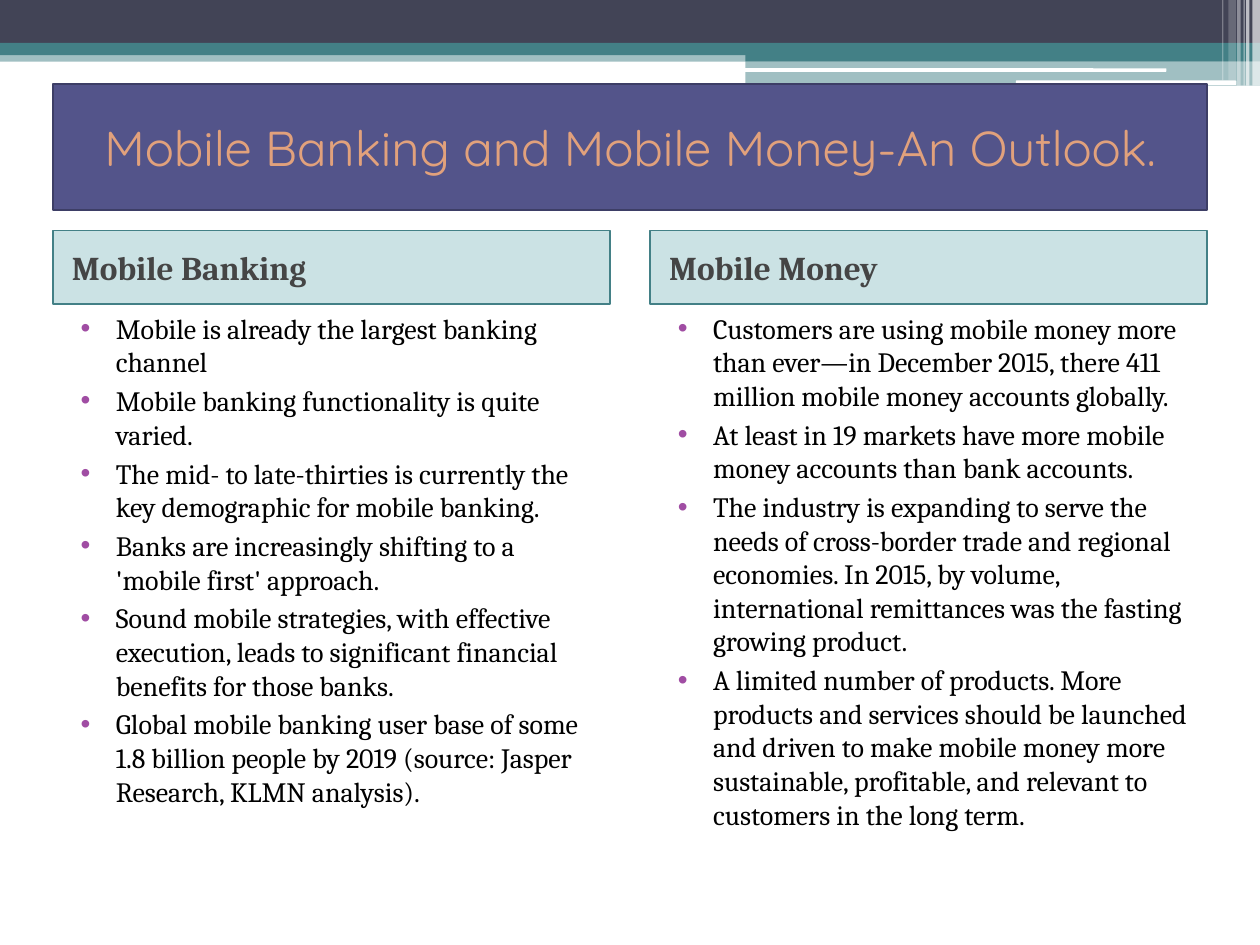
"""Build the slide that sets mobile banking beside mobile money."""
from dataclasses import dataclass

from lxml import etree
from pptx import Presentation
from pptx import util as u
from pptx.dml.color import RGBColor
from pptx.enum import shapes, text
from pptx.oxml.ns import qn


@dataclass(frozen=True)
class Theme:
    navy: str = "424456"
    teal: str = "438086"
    tint: str = "328E97"
    white: str = "FFFFFF"
    plum: str = "53548A"
    edge: str = "3D3E66"
    peach: str = "E1A17C"
    gray: str = "454545"
    black: str = "000000"
    dot: str = "A04DA3"
    serif: str = "Cambria"
    sans: str = "Quicksand"
    big: int = 28
    mid: int = 19
    small: int = 16


class Deck:
    def __init__(self, theme):
        self.theme = theme
        self.prs = Presentation()
        self.prs.slide_width, self.prs.slide_height = u.Pt(720), u.Pt(540)
        self.slide = self.prs.slides.add_slide(self.prs.slide_layouts[4])

    def place(self, shape, box):
        for key, val in zip(("left", "top", "width", "height"), box):
            setattr(shape, key, u.Pt(val))

    def paint(self, shape, color, alpha=100):
        shape.fill.solid()
        shape.fill.fore_color.rgb = RGBColor.from_string(color)
        if alpha < 100:
            node = shape.fill._xPr.find(".//" + qn("a:srgbClr"))
            etree.SubElement(node, qn("a:alpha"), val=str(alpha * 1000))

    def edge(self, shape, color, width):
        shape.line.color.rgb = RGBColor.from_string(color)
        shape.line.width = u.Pt(width)

    def bar(self, box, color, alpha=100, kind="RECTANGLE"):
        kind = getattr(shapes.MSO_SHAPE, kind)
        shape = self.slide.shapes.add_shape(kind, *map(u.Pt, box))
        shape.shadow.inherit = False
        self.paint(shape, color, alpha)
        shape.line.fill.background()

    def fill(self, idx, box, lines, font, color, anchor="TOP", form=None, ind=(0, 0)):
        shape = self.slide.placeholders[idx]
        self.slide.shapes._spTree.append(shape._element)
        self.place(shape, box)
        frame = shape.text_frame
        frame.text = "\n".join(lines)
        look = {"word_wrap": True, "auto_size": text.MSO_AUTO_SIZE.NONE,
                "vertical_anchor": getattr(text.MSO_ANCHOR, anchor)}
        for key, val in look.items():
            setattr(frame, key, val)
        for para in frame.paragraphs:
            for key, val in (form or {}).items():
                setattr(para, key, val)
            for key, val in font.items():
                setattr(para.runs[0].font, key, val)
            para.runs[0].font.color.rgb = RGBColor.from_string(color)
            props = para._p.get_or_add_pPr()
            for key, val in zip(("marL", "indent"), ind):
                props.set(key, str(u.Pt(val)))
        return shape

    def title(self, box, words):
        t = self.theme
        font = {"name": t.sans, "size": u.Pt(t.big), "bold": False}
        shape = self.fill(0, box, [words], font, t.peach, "MIDDLE",
                          {"alignment": text.PP_ALIGN.CENTER})
        self.paint(shape, t.plum)
        self.edge(shape, t.edge, 1.5)

    def head(self, idx, box, words):
        t = self.theme
        font = {"name": t.serif, "size": u.Pt(t.mid), "bold": True}
        shape = self.fill(idx, box, [words], font, t.gray, "MIDDLE",
                          {"space_before": u.Pt(3)}, (3.6, 0))
        self.paint(shape, t.tint, 25)
        self.edge(shape, t.teal, 1)

    def points(self, idx, box, lines):
        t = self.theme
        font = {"name": t.serif, "size": u.Pt(t.small)}
        shape = self.fill(idx, box, lines, font, t.black,
                          form={"space_before": u.Pt(3)}, ind=(28.8, -20.16))
        for para in shape.text_frame.paragraphs:
            props = para._p.get_or_add_pPr()
            tone = etree.SubElement(props, qn("a:buClr"))
            etree.SubElement(tone, qn("a:srgbClr"), val=t.dot)
            etree.SubElement(props, qn("a:buChar"), char="•")


BANKING = [
    "Mobile is already the largest banking channel",
    "Mobile banking functionality is quite varied.",
    "The mid- to late-thirties is currently the key demographic for mobile banking.",
    "Banks are increasingly shifting to a 'mobile first' approach.",
    "Sound mobile strategies, with effective execution, leads to significant "
    "financial benefits for those banks.",
    "Global mobile banking user base of some 1.8 billion people by 2019 "
    "(source: Jasper Research, KLMN analysis).",
]
MONEY = [
    "Customers are using mobile money more than ever—in December 2015, there 411 "
    "million mobile money accounts globally.",
    "At least in 19 markets have more mobile money accounts than bank accounts.",
    "The industry is expanding to serve the needs of cross-border trade and regional "
    "economies. In 2015, by volume, international remittances was the fasting "
    "growing product.",
    "A limited number of products. More products and services should be launched and "
    "driven to make mobile money more sustainable, profitable, and relevant to "
    "customers in the long term.",
]


def main():
    t = Theme()
    deck = Deck(t)
    bands = [
        ((0, 28.8, 720, 6.5), t.teal, 50),
        ((0, 0, 720, 24.5), t.navy, 100),
        ((0, 24.5, 720, 7), t.teal, 100),
        ((426, 28, 294, 7), t.teal, 100),
        ((426, 35, 294, 14), t.teal, 50),
    ]
    for band in bands:
        deck.bar(*band)
    for box in ((425.5, 39, 241, 2), (580.5, 46, 126, 2.6)):
        deck.bar(box, t.white, kind="ROUNDED_RECTANGLE")
    strips = [(715.7, 4.3, 49, 65), (712, 2, 49, 65), (710.6, 0.7, 49, 60),
              (707, 2, 49, 40), (702, 4.3, 46, 20), (698.4, 0.7, 46, 30)]
    for left, width, height, alpha in strips:
        deck.bar((left, 0, width, height), t.white, alpha)

    left, width, gap = 30.24, 318.24, 23.04
    columns = [("Mobile Banking", BANKING, 365.76), ("Mobile Money", MONEY, 345.6)]
    for col, (name, lines, height) in enumerate(columns):
        x = left + col * (width + gap)
        deck.head(1 + 2 * col, (x, 131.76, width, 42), name)
        deck.points(2 + 2 * col, (x, 174.24, width, height), lines)
    deck.title((left, 48, 2 * width + gap, 72),
               "Mobile Banking and Mobile Money-An Outlook.")
    deck.prs.save("out.pptx")


if __name__ == "__main__":
    main()
